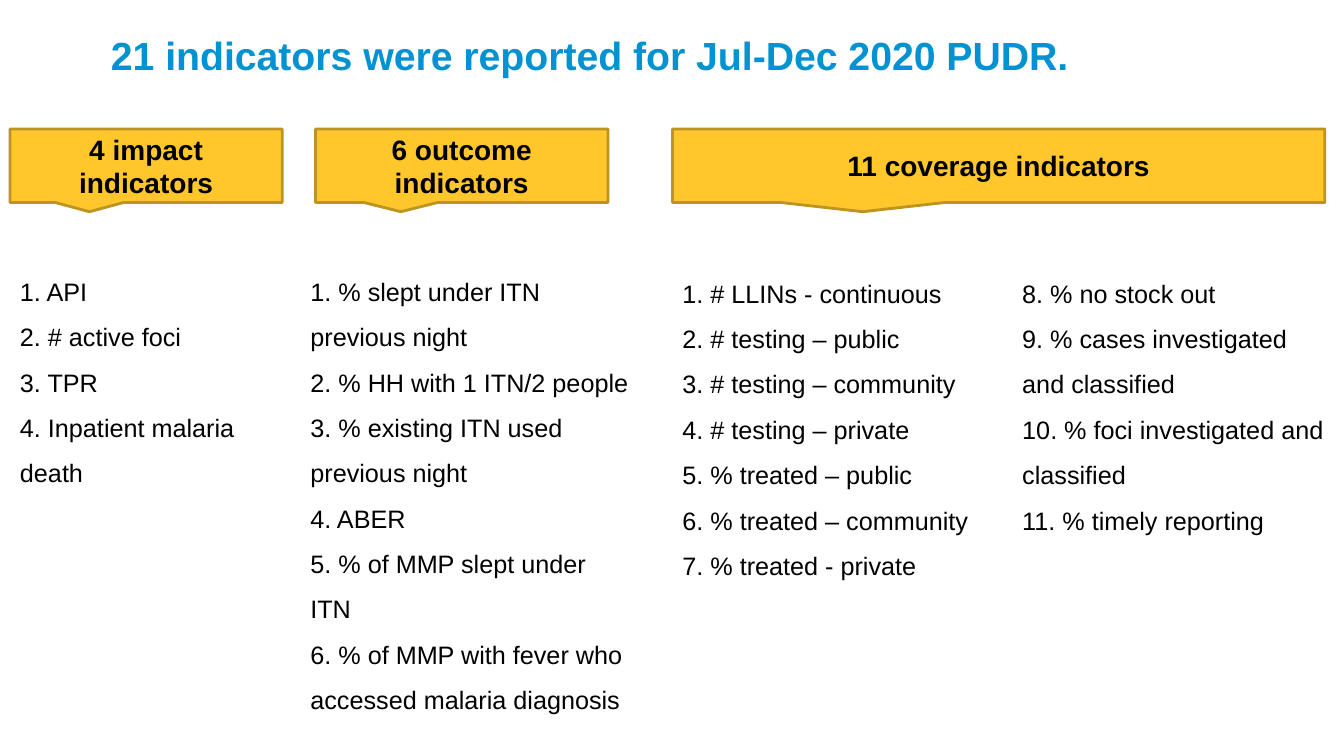
"""Build the slide that lists the indicators reported for Jul-Dec 2020."""
from pptx import Presentation
from pptx.dml.color import RGBColor
from pptx.enum import shapes, text
from pptx.util import Inches, Pt

BLUE = RGBColor(0x00, 0x92, 0xD1)
GOLD = RGBColor(0xFF, 0xC7, 0x2C)
DARK_GOLD = RGBColor(0xBD, 0x93, 0x21)
BLACK = RGBColor(0x00, 0x00, 0x00)
FONT = "Arial"

HEADERS = [
    ("4 impact indicators", 0.1, 2.7),
    ("6 outcome indicators", 3.13, 2.9),
    ("11 coverage indicators", 6.67, 6.47),
]

IMPACT = ["API", "# active foci", "TPR", "Inpatient malaria death"]
OUTCOME = [
    "% slept under ITN previous night",
    "% HH with 1 ITN/2 people",
    "% existing ITN used previous night",
    "ABER",
    "% of MMP slept under ITN",
    "% of MMP with fever who accessed malaria diagnosis",
]
COVERAGE = [
    "# LLINs - continuous",
    "# testing – public",
    "# testing – community",
    "# testing – private",
    "% treated – public",
    "% treated – community",
    "% treated - private",
]
COVERAGE_MORE = [
    "% no stock out",
    "% cases investigated and classified",
    "% foci investigated and classified",
    "% timely reporting",
]

LISTS = [
    (IMPACT, 1, (0.1, 2.54, 2.7, 2.32)),
    (OUTCOME, 1, (2.98, 2.54, 3.38, 4.59)),
    (COVERAGE, 1, (6.67, 2.56, 3.19, 3.23)),
    (COVERAGE_MORE, 8, (10.04, 2.56, 3.19, 2.77)),
]


def write(tf, lines, size=18, color=BLACK, bold=False,
          align=text.PP_ALIGN.LEFT, spacing=None):
    for i, line in enumerate(lines):
        p = tf.paragraphs[0] if i == 0 else tf.add_paragraph()
        p.alignment = align
        p.line_spacing = spacing
        r = p.add_run()
        r.text = line
        r.font.name = FONT
        r.font.size = Pt(size)
        r.font.bold = bold
        r.font.color.rgb = color


class IndicatorSlide:
    def __init__(self, prs):
        self.s = prs.slides.add_slide(prs.slide_layouts[5])

    def title(self, wording, left, top, width, height):
        sp = self.s.shapes.title
        sp.left, sp.top = Inches(left), Inches(top)
        sp.width, sp.height = Inches(width), Inches(height)
        tf = sp.text_frame
        tf.margin_left = tf.margin_right = tf.margin_top = tf.margin_bottom = 0
        tf.vertical_anchor = text.MSO_ANCHOR.MIDDLE
        write(tf, [wording], size=28, color=BLUE, bold=True)

    def header(self, wording, left, width):
        sp = self.s.shapes.add_shape(
            shapes.MSO_SHAPE.RECTANGULAR_CALLOUT,
            Inches(left), Inches(1.28), Inches(width), Inches(0.73))
        sp.shadow.inherit = False
        sp.fill.solid()
        sp.fill.fore_color.rgb = GOLD
        sp.line.color.rgb = DARK_GOLD
        sp.line.width = Pt(2)
        tf = sp.text_frame
        tf.word_wrap = True
        tf.vertical_anchor = text.MSO_ANCHOR.MIDDLE
        write(tf, [wording], size=20, bold=True, align=text.PP_ALIGN.CENTER)

    def numbered_list(self, items, start, box):
        sp = self.s.shapes.add_textbox(*map(Inches, box))
        tf = sp.text_frame
        tf.word_wrap = True
        tf.auto_size = text.MSO_AUTO_SIZE.SHAPE_TO_FIT_TEXT
        lines = [f"{n}. {item}" for n, item in enumerate(items, start)]
        write(tf, lines, spacing=1.5)


def main():
    prs = Presentation()
    prs.slide_width, prs.slide_height = Inches(13.33), Inches(7.5)
    slide = IndicatorSlide(prs)
    slide.title("21 indicators were reported for Jul-Dec 2020 PUDR.",
                1.1, 0.11, 11.23, 0.87)
    for header in HEADERS:
        slide.header(*header)
    for column in LISTS:
        slide.numbered_list(*column)
    prs.save("out.pptx")


if __name__ == "__main__":
    main()
